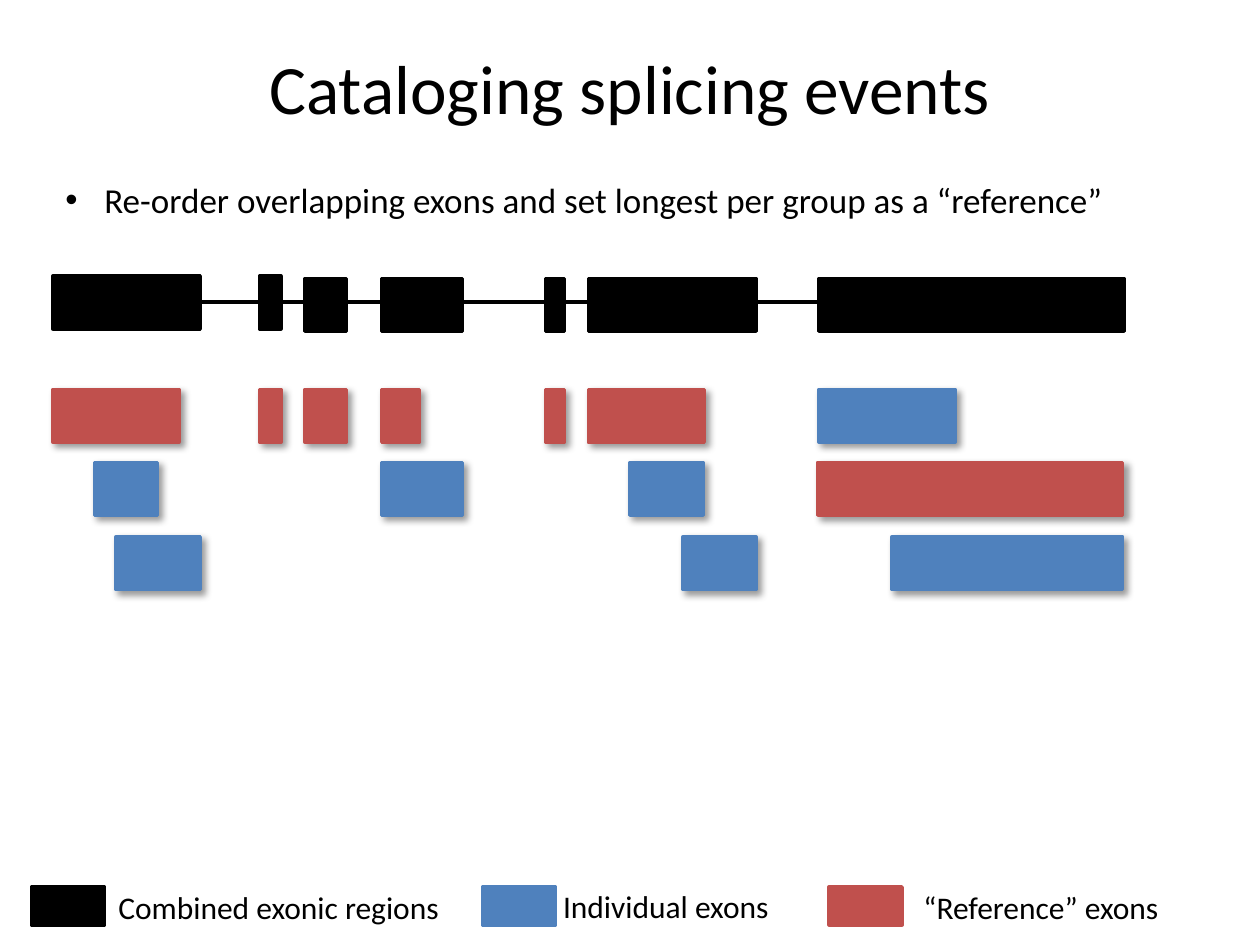
from typing import NamedTuple

from lxml import etree
from pptx import Presentation
from pptx.dml.color import RGBColor
from pptx.enum.shapes import MSO_CONNECTOR, MSO_SHAPE
from pptx.enum.text import MSO_ANCHOR, MSO_AUTO_SIZE, PP_ALIGN
from pptx.oxml import parse_xml
from pptx.oxml.ns import nsdecls, qn
from pptx.util import Inches, Pt

RECTANGLE = MSO_SHAPE.RECTANGLE
STRAIGHT = MSO_CONNECTOR.STRAIGHT
MIDDLE, TOP = MSO_ANCHOR.MIDDLE, MSO_ANCHOR.TOP
CENTER, LEFT = PP_ALIGN.CENTER, PP_ALIGN.LEFT
FIT_SHAPE, NO_FIT = MSO_AUTO_SIZE.SHAPE_TO_FIT_TEXT, MSO_AUTO_SIZE.NONE

BLACK = RGBColor(0x00, 0x00, 0x00)
BLUE = RGBColor(0x4F, 0x81, 0xBD)
RED = RGBColor(0xC0, 0x50, 0x4D)

FONT = "Calibri"
EXON_HEIGHT = 0.42
REGION_TOP = 2.21
RAISED_TOP = 2.19
INTRON_Y = 2.4
ROW_TOPS = (3.09, 3.67, 4.26)
KEY_TOP, KEY_WIDTH, KEY_HEIGHT = 7.04, 0.58, 0.3
SHADOW = (
    f'<a:effectLst {nsdecls("a")}><a:outerShdw blurRad="50800" dist="38100" '
    'dir="2700000" algn="tl" rotWithShape="0"><a:srgbClr val="000000">'
    '<a:alpha val="40000"/></a:srgbClr></a:outerShdw></a:effectLst>'
)


class Exon(NamedTuple):
    """An individual exon in one of the stacked rows."""

    row: int
    left: float
    width: float
    color: RGBColor


class Region(NamedTuple):
    """A combined exonic region on the gene model."""

    left: float
    width: float
    top: float = REGION_TOP


class Key(NamedTuple):
    """A legend entry."""

    left: float
    color: RGBColor
    label: str
    label_left: float
    label_top: float
    label_width: float


EXONS = (
    Exon(0, 0.42, 1, RED),
    Exon(0, 2.06, 0.17, RED),
    Exon(0, 2.42, 0.33, RED),
    Exon(0, 3.03, 0.3, RED),
    Exon(0, 4.33, 0.15, RED),
    Exon(0, 4.67, 0.92, RED),
    Exon(0, 6.5, 1.08, BLUE),
    Exon(1, 0.75, 0.5, BLUE),
    Exon(1, 3.03, 0.64, BLUE),
    Exon(1, 5, 0.58, BLUE),
    Exon(1, 6.49, 2.42, RED),
    Exon(2, 0.92, 0.67, BLUE),
    Exon(2, 5.42, 0.58, BLUE),
    Exon(2, 7.08, 1.83, BLUE),
)
REGIONS = (
    Region(0.42, 1.17, RAISED_TOP),
    Region(2.06, 0.17, RAISED_TOP),
    Region(2.42, 0.33),
    Region(3.03, 0.64),
    Region(4.33, 0.15),
    Region(4.67, 1.33),
    Region(6.5, 2.42),
)
INTRONS = ((1.08, 7.17), (2.42, 5.83))
KEYS = (
    Key(0.25, BLACK, "Combined exonic regions", 0.84, 7, 2.78),
    Key(3.83, BLUE, "Individual exons", 4.37, 6.99, 1.85),
    Key(6.58, RED, "“Reference” exons", 7.23, 7, 2.09),
)


def add_block(slide, left: float, top: float, width: float, height: float,
              color: RGBColor, shadow: bool = False) -> None:
    """Draw a solid rectangle, with a soft shadow if asked."""
    shape = slide.shapes.add_shape(
        RECTANGLE, Inches(left), Inches(top), Inches(width), Inches(height))
    shape.fill.solid()
    shape.fill.fore_color.rgb = color
    shape.line.color.rgb = color
    shape.line.width = Pt(2)
    shape.shadow.inherit = False
    if shadow:
        properties = shape.element.spPr
        properties.replace(properties.find(qn("a:effectLst")), parse_xml(SHADOW))


def add_intron(slide, start: float, end: float) -> None:
    """Draw a horizontal line along the gene model."""
    line = slide.shapes.add_connector(
        STRAIGHT, Inches(start), Inches(INTRON_Y), Inches(end), Inches(INTRON_Y))
    line.line.color.rgb = BLACK
    line.line.width = Pt(2.25)
    etree.SubElement(line.element.spPr, qn("a:effectLst"))


def add_text(slide, text: str, left: float, top: float, width: float,
             height: float, *, size: float, align=LEFT, anchor=TOP,
             wrap: bool = True, fit=FIT_SHAPE, bullet: bool = False) -> None:
    """Write one paragraph in a text box."""
    box = slide.shapes.add_textbox(
        Inches(left), Inches(top), Inches(width), Inches(height))
    frame = box.text_frame
    frame.word_wrap = wrap
    frame.auto_size = fit
    frame.vertical_anchor = anchor
    paragraph = frame.paragraphs[0]
    paragraph.alignment = align
    run = paragraph.add_run()
    run.text = text
    run.font.size = Pt(size)
    run.font.name = FONT
    run.font.color.rgb = BLACK
    if bullet:
        properties = paragraph._p.get_or_add_pPr()
        properties.set("marL", str(Inches(0.31)))
        properties.set("indent", str(Inches(-0.31)))
        etree.SubElement(properties, qn("a:buFont"), typeface="Arial")
        etree.SubElement(properties, qn("a:buChar"), char="•")


def main() -> None:
    """Build the slide on splicing events."""
    presentation = Presentation()
    presentation.slide_width = Inches(10)
    presentation.slide_height = Inches(7.5)
    slide = presentation.slides.add_slide(presentation.slide_layouts[6])

    add_text(slide, "Cataloging splicing events", 0.5, 0.3, 9, 0.78,
             size=39.6, align=CENTER, anchor=MIDDLE, fit=NO_FIT)
    for exon in EXONS:
        add_block(slide, exon.left, ROW_TOPS[exon.row], exon.width,
                  EXON_HEIGHT, exon.color, shadow=True)
    for start, end in INTRONS:
        add_intron(slide, start, end)
    for region in REGIONS:
        add_block(slide, region.left, region.top, region.width, EXON_HEIGHT, BLACK)
    add_text(
        slide,
        "Re-order overlapping exons and set longest per group as a “reference”",
        0.42, 1.37, 8.66, 0.44, size=20, bullet=True)
    for key in KEYS:
        add_block(slide, key.left, KEY_TOP, KEY_WIDTH, KEY_HEIGHT, key.color)
        add_text(slide, key.label, key.label_left, key.label_top,
                 key.label_width, 0.4, size=18, wrap=False)

    presentation.save("out.pptx")


if __name__ == "__main__":
    main()
